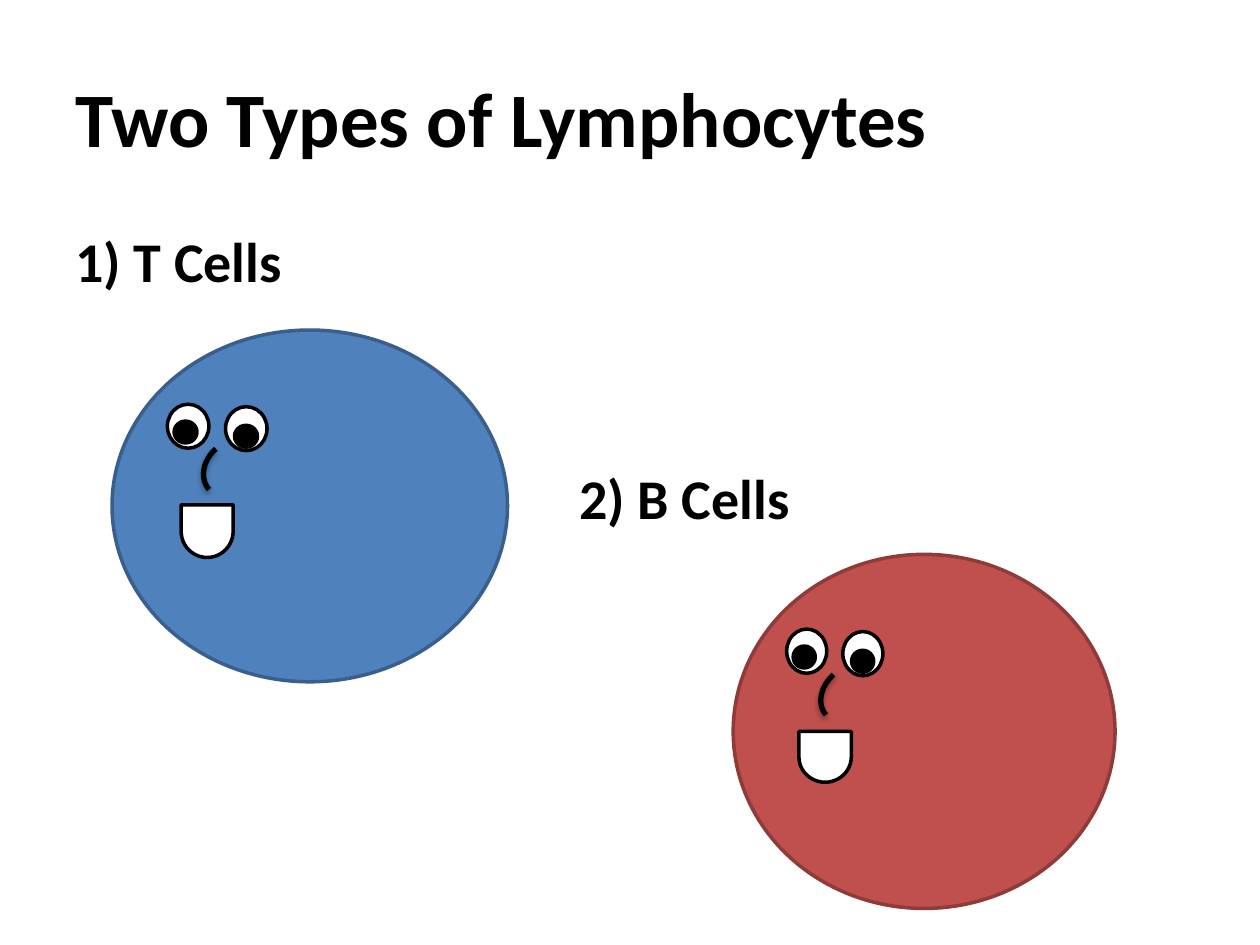
from dataclasses import dataclass

from lxml.etree import SubElement
from pptx import Presentation
from pptx.dml.color import RGBColor
from pptx.enum.shapes import MSO_SHAPE as Shape
from pptx.enum.text import MSO_ANCHOR as Anchor
from pptx.oxml.ns import qn
from pptx.util import Pt


@dataclass(frozen=True)
class Theme:
    font: str = "Calibri"
    title_size: int = 44
    body_size: int = 32
    black: str = "000000"
    white: str = "FFFFFF"
    blue: str = "4F81BD"
    blue_edge: str = "3A5F8C"
    red: str = "C0504D"
    red_edge: str = "8E3B39"
    outline: int = 2
    nose_line: int = 3


THEME = Theme()

# Left, top, width and height of each facial part, in percent of the cell.
EYES = [(14, 21.1, 10.5, 12.5), (28.7, 21.8, 10.5, 12.5)]
PUPILS = [(15.7, 25.9, 5.8, 6.2), (31, 27.1, 5.8, 6.2)]
NOSE = (24, 30.2, 13.2, 18.2)
MOUTH = (17.4, 49.8, 13.3, 14.8)


def within(box, part):
    """Turn a part in percent of the box into a box in points."""
    left, top, width, height = box
    x, y, w, h = (value / 100 for value in part)
    return left + x * width, top + y * height, w * width, h * height


def add_part(group, preset, box, fill, line, weight=THEME.outline, rotation=0):
    part = group.shapes.add_shape(preset, *map(Pt, box))
    part.shadow.inherit = False
    part.rotation = rotation
    if fill:
        part.fill.solid()
        part.fill.fore_color.rgb = RGBColor.from_string(fill)
    else:
        part.fill.background()
    part.line.color.rgb = RGBColor.from_string(line)
    part.line.width = Pt(weight)
    return part


def add_soft_shadow(part):
    effects = part._element.spPr.find(qn("a:effectLst"))
    shadow = SubElement(effects, qn("a:outerShdw"), blurRad=str(Pt(3.1)),
                        dist=str(Pt(1.8)), dir="5400000", rotWithShape="0")
    color = SubElement(shadow, qn("a:srgbClr"), val=THEME.black)
    SubElement(color, qn("a:alpha"), val="35000")


def add_cell(page, box, fill, edge):
    """Draw a round cell with a face at its upper left."""
    group = page.shapes.add_group_shape()
    add_part(group, Shape.OVAL, box, fill, edge)
    for parts, color in ((EYES, THEME.white), (PUPILS, THEME.black)):
        for part in parts:
            add_part(group, Shape.OVAL, within(box, part), color, THEME.black)
    nose = add_part(group, Shape.ARC, within(box, NOSE), None, THEME.black,
                    THEME.nose_line, rotation=228.6)
    add_soft_shadow(nose)
    add_part(group, Shape.FLOWCHART_DELAY, within(box, MOUTH), THEME.white,
             THEME.black, rotation=90)


def add_text(page, box, lines, size, anchor=Anchor.TOP):
    """Write lines of (text, indent, space before) in bold."""
    frame = page.shapes.add_textbox(*map(Pt, box)).text_frame
    frame.word_wrap = True
    frame.vertical_anchor = anchor
    for index, (text, indent, space) in enumerate(lines):
        para = frame.add_paragraph() if index else frame.paragraphs[0]
        para.text = text
        para.space_before = Pt(space)
        para._p.get_or_add_pPr().set("marL", str(Pt(indent)))
        para.font.name = THEME.font
        para.font.size = Pt(size)
        para.font.bold = True
        para.font.color.rgb = RGBColor.from_string(THEME.black)


def main():
    deck = Presentation()
    deck.slide_width, deck.slide_height = Pt(720), Pt(540)
    page = deck.slides.add_slide(deck.slide_layouts[6])
    add_text(page, (36, 21.6, 648, 90), [("Two Types of Lymphocytes", 0, 0)],
             THEME.title_size, Anchor.MIDDLE)
    add_text(page, (36, 126, 648, 356.4),
             [("1) T Cells", 0, 6.4), ("2) B Cells", 288, 97)], THEME.body_size)
    add_cell(page, (419, 316.8, 218.2, 202.3), THEME.red, THEME.red_edge)
    add_cell(page, (64, 188.6, 226, 201), THEME.blue, THEME.blue_edge)
    deck.save("out.pptx")


if __name__ == "__main__":
    main()
